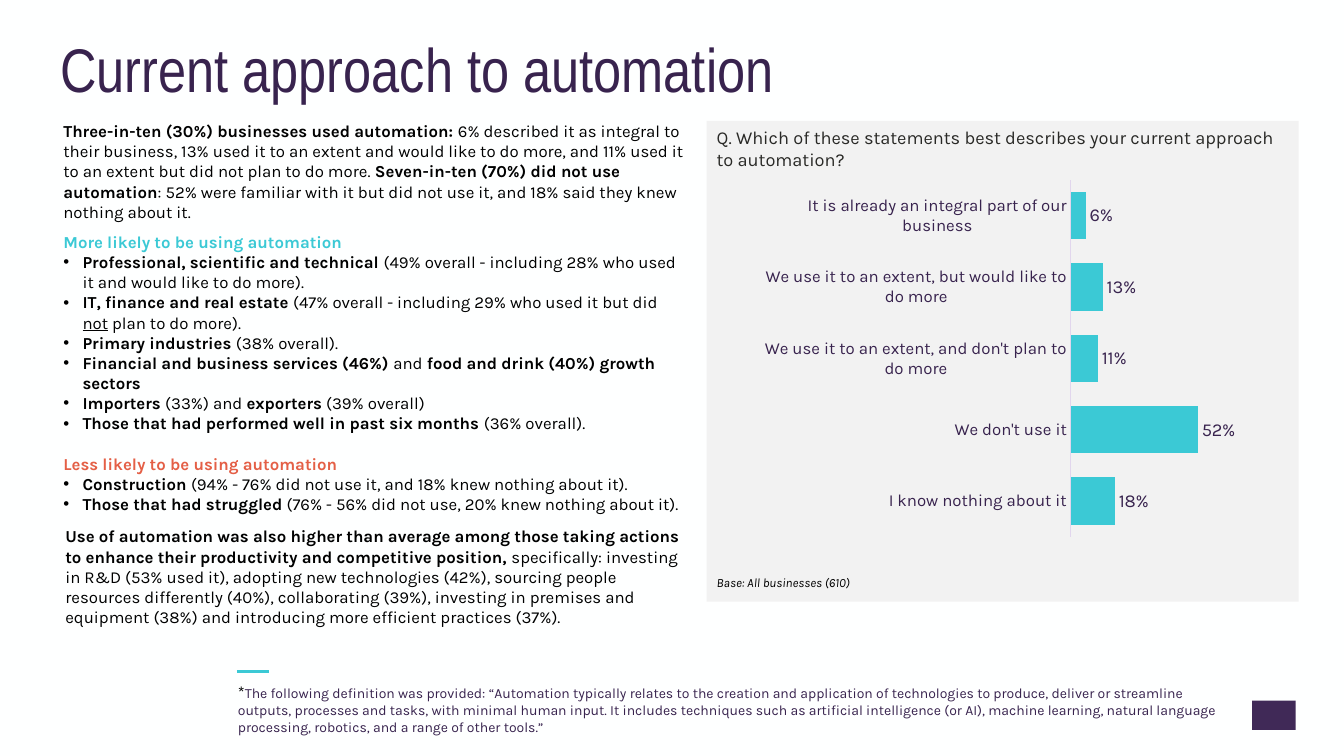
from lxml import etree
from pptx import Presentation
from pptx import util as u
from pptx.chart import data as chart_data
from pptx.dml.color import RGBColor
from pptx.enum import chart as ch
from pptx.enum import shapes, text
from pptx.oxml import parse_xml
from pptx.oxml.ns import nsdecls, qn

PURPLE, TEAL, CORAL, BLACK = "38234E", "3BC9D5", "E45F46", "000000"
BODY_FONT = "Karla"


def rgb(value):
    return RGBColor.from_string(value)


def style_font(font, size, color, name=BODY_FONT, bold=False, italic=False, underline=False):
    font.size, font.name = u.Pt(size), name
    font.bold, font.italic, font.underline = bold, italic, underline
    font.color.rgb = rgb(color)


def b(words):
    """A bold run."""
    return words, {"bold": True}


def add_runs(paragraph, runs, **style):
    """Runs are plain strings or (string, format changes) pairs."""
    for run in runs:
        words, changes = (run, {}) if isinstance(run, str) else run
        piece = paragraph.add_run()
        piece.text = words
        style_font(piece.font, **{**style, **changes})


def add_bullet(paragraph):
    properties = paragraph._p.get_or_add_pPr()
    properties.set("marL", str(u.Inches(0.19)))
    properties.set("indent", str(-u.Inches(0.19)))
    etree.SubElement(properties, qn("a:buFont")).set("typeface", "Arial")
    etree.SubElement(properties, qn("a:buChar")).set("char", "•")


def add_text(slide, box, runs, size=12, color=BLACK, middle=False, margins=None, **style):
    """Add a text box holding one paragraph and return its text frame."""
    frame = slide.shapes.add_textbox(*map(u.Inches, box)).text_frame
    frame.word_wrap = True
    if middle:
        frame.vertical_anchor = text.MSO_ANCHOR.MIDDLE
    if margins:
        (frame.margin_left, frame.margin_top,
         frame.margin_right, frame.margin_bottom) = map(u.Inches, margins)
    add_runs(frame.paragraphs[0], runs, size=size, color=color, **style)
    return frame


def add_bullets(frame, items):
    for runs in items:
        paragraph = frame.add_paragraph()
        add_bullet(paragraph)
        add_runs(paragraph, runs, size=12, color=BLACK)


def add_rectangle(slide, box, color):
    shape = slide.shapes.add_shape(shapes.MSO_SHAPE.RECTANGLE, *map(u.Inches, box))
    shape.shadow.inherit = False
    shape.fill.solid()
    shape.fill.fore_color.rgb = rgb(color)
    shape.line.fill.background()


def add_rule(slide, left, top, width, color):
    line = slide.shapes.add_connector(
        shapes.MSO_CONNECTOR.STRAIGHT, u.Inches(left), u.Inches(top),
        u.Inches(left + width), u.Inches(top))
    line.line.color.rgb = rgb(color)
    line.line.width = u.Pt(2)
    etree.SubElement(line._element.spPr, qn("a:effectLst"))


def set_plot_layout(chart, **place):
    """Fix the inner plot area as fractions of the chart."""
    plot_area = chart._chartSpace.chart.plotArea
    for old in plot_area.findall(qn("c:layout")):
        plot_area.remove(old)
    values = "".join(f'<c:{key} val="{value}"/>' for key, value in place.items())
    plot_area.insert(0, parse_xml(
        f'<c:layout {nsdecls("c")}><c:manualLayout><c:layoutTarget val="inner"/>'
        f'<c:xMode val="edge"/><c:yMode val="edge"/>{values}'
        '</c:manualLayout></c:layout>'))


def add_bar_chart(slide, box, answers):
    data = chart_data.CategoryChartData(number_format="0%")
    data.categories = list(answers)
    data.add_series("Series 1", list(answers.values()))
    chart = slide.shapes.add_chart(
        ch.XL_CHART_TYPE.BAR_CLUSTERED, *map(u.Inches, box), data).chart
    chart.has_legend = chart.has_title = False
    style_font(chart.font, 13, PURPLE, name="Calibri")
    set_plot_layout(chart, x=0.558, y=0, w=0.257, h=0.961)

    # Axes
    categories, values = chart.category_axis, chart.value_axis
    categories.reverse_order = True
    categories.major_tick_mark = ch.XL_TICK_MARK.NONE
    categories.format.line.color.rgb = rgb("E1D6ED")
    categories.format.line.width = u.Pt(0.75)
    style_font(categories.tick_labels.font, 12, PURPLE)
    values.visible = values.has_major_gridlines = False
    values.minimum_scale, values.maximum_scale = 0, 0.6

    # Bars and their labels
    plot = chart.plots[0]
    plot.gap_width = 50
    plot.vary_by_categories = False
    series = plot.series[0]
    series.format.fill.solid()
    series.format.fill.fore_color.rgb = rgb(TEAL)
    labels = series.data_labels
    labels.show_value = True
    labels.number_format, labels.number_format_is_linked = "0%", False
    labels.position = ch.XL_LABEL_POSITION.OUTSIDE_END
    style_font(labels.font, 13, PURPLE)


def main():
    presentation = Presentation()
    presentation.slide_width, presentation.slide_height = u.Inches(13.33), u.Inches(7.5)
    slide = presentation.slides.add_slide(presentation.slide_layouts[6])
    slide.background.fill.solid()
    slide.background.fill.fore_color.rgb = rgb("FEFFFF")

    # Page marker and title
    add_rectangle(slide, (12.42, 6.95, 0.43, 0.29), "402957")
    title = add_text(slide, (0.5, 0.24, 11.5, 0.96), ["Current approach to automation"],
                     size=44, color=PURPLE, name="Arial Narrow", middle=True)
    title.paragraphs[0].line_spacing = 0.9

    # Summary
    add_text(slide, (0.53, 1.15, 6.39, 1.11), [
        b("Three-in-ten (30%) businesses used automation: "),
        "6% described it as integral to their business, 13% used it to an extent and would "
        "like to do more, and 11% used it to an extent but did not plan to do more. ",
        b("Seven-in-ten (70%) did not use automation"),
        ": 52% were familiar with it but did not use it, and 18% said they knew nothing about it."])

    # Question panel with chart
    add_rectangle(slide, (7.01, 1.2, 5.87, 4.77), "F2F2F2")
    add_text(slide, (7.01, 5.65, 4.68, 0.25), ["Base: All businesses (610)"],
             size=9, italic=True, middle=True)
    add_text(slide, (7.01, 1.26, 5.78, 0.42),
             ["Q. Which of these statements best describes your current approach to automation?"],
             size=13, color="292926", middle=True)
    add_bar_chart(slide, (7.47, 1.78, 5.65, 3.69), {
        "It is already an integral part of our business": 0.06,
        "We use it to an extent, but would like to do more": 0.13,
        "We use it to an extent, and don't plan to do more": 0.11,
        "We don't use it": 0.52,
        "I know nothing about it": 0.18})

    # Groups more and less likely to use automation
    groups = add_text(slide, (0.53, 2.25, 6.35, 2.93),
                      ["More likely to be using automation"], color=TEAL, bold=True)
    add_bullets(groups, [
        [b("Professional, scientific and technical "),
         "(49% overall - including 28% who used it and would like to do more)."],
        [b("IT, finance and real estate "), "(47% overall - including 29% who used it but did ",
         ("not", {"underline": True}), " plan to do more)."],
        [b("Primary industries "), "(38% overall)."],
        [b("Financial and business services (46%) "), "and",
         b(" food and drink (40%) growth sectors")],
        [b("Importers "), "(33%) and ", b("exporters"), " (39% overall)"],
        [b("Those that had performed well in past six months "), "(36% overall)."]])
    less_likely = groups.add_paragraph()
    less_likely.space_before = u.Pt(14.4)
    add_runs(less_likely, ["Less likely to be using automation"], size=12, color=CORAL, bold=True)
    add_bullets(groups, [
        [b("Construction "), "(94% - 76% did not use it, and 18% knew nothing about it)."],
        [b("Those that had struggled"), " (76% - 56% did not use, 20% knew nothing about it)."]])

    # Productivity actions
    add_text(slide, (0.55, 5.17, 6.35, 1.11), [
        b("Use of automation was also higher than average among those taking actions to "
          "enhance their productivity and competitive position, "),
        "specifically: investing in R&D (53% used it), adopting new technologies (42%), "
        "sourcing people resources differently (40%), collaborating (39%), investing in "
        "premises and equipment (38%) and introducing more efficient practices (37%)."])

    # Footnote
    footnote = add_text(slide, (2.35, 6.73, 9.76, 0.89), [
        ("*", {"size": 12, "color": BLACK}),
        "The following definition was provided: “Automation typically relates to the creation "
        "and application of technologies to produce, deliver or streamline outputs, processes "
        "and tasks, with minimal human input. It includes techniques such as artificial "
        "intelligence (or AI), machine learning, natural language processing, robotics, and a "
        "range of other tools.”"], size=10, color=PURPLE, margins=(0.01, 0.03, 0, 0))
    footnote.paragraphs[0].space_after = u.Pt(6)
    add_rule(slide, 2.35, 6.66, 0.32, TEAL)

    presentation.save("out.pptx")


if __name__ == "__main__":
    main()
